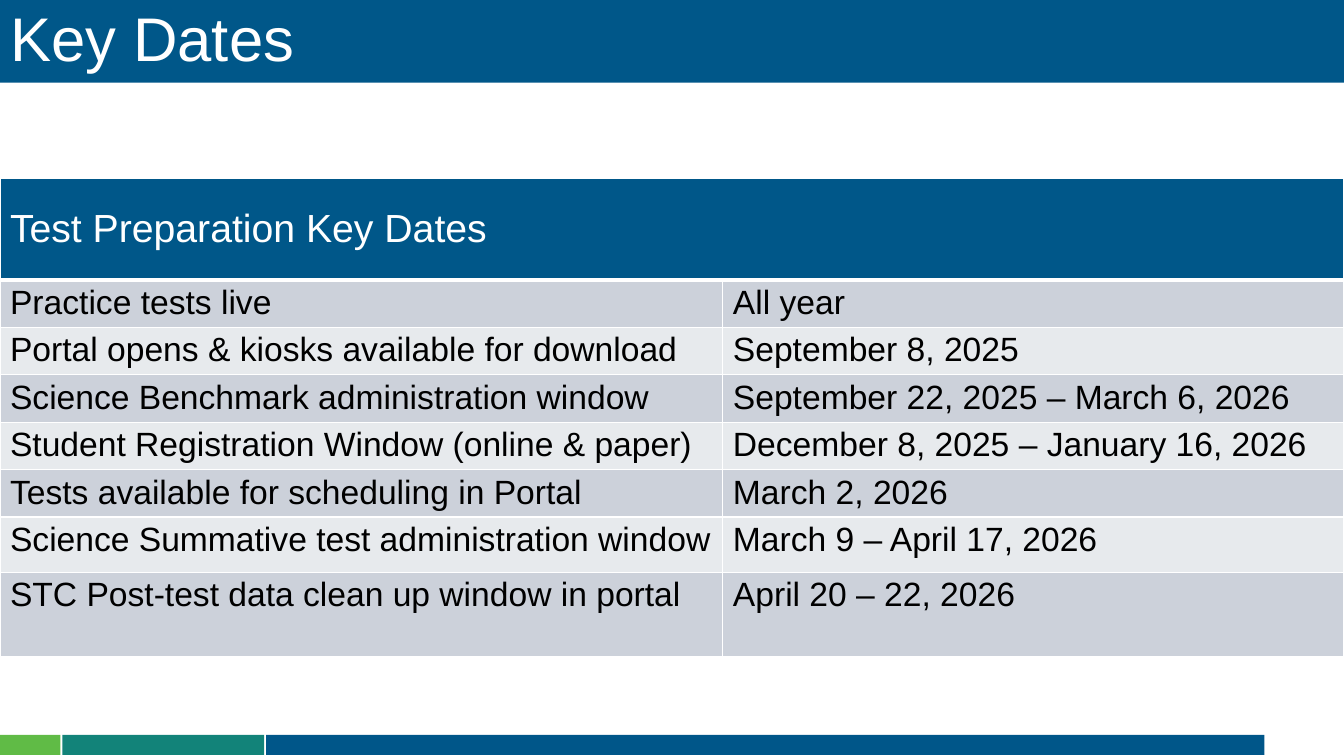
from typing import NamedTuple

import pptx
import pptx.dml.color
import pptx.enum.shapes
import pptx.enum.text
import pptx.oxml
import pptx.oxml.ns
import pptx.util

Inches = pptx.util.Inches
Pt = pptx.util.Pt
RGBColor = pptx.dml.color.RGBColor

FONT = "Arial"
WHITE = RGBColor(0xFF, 0xFF, 0xFF)
BLACK = RGBColor(0x00, 0x00, 0x00)
TITLE_BLUE = RGBColor(0x00, 0x57, 0x89)
FOOTER_BLUE = RGBColor(0x00, 0x56, 0x89)
GREEN = RGBColor(0x60, 0xBB, 0x46)
TEAL = RGBColor(0x12, 0x83, 0x79)
BANDS = (RGBColor(0xCC, 0xD1, 0xDA), RGBColor(0xE7, 0xEA, 0xED))

SLIDE_WIDTH = 13.33
COLUMN_WIDTHS = (7.17, 6.16)
HEADER_HEIGHT = 1.01


class FooterBar(NamedTuple):
    left: float
    width: float
    color: RGBColor


class KeyDate(NamedTuple):
    event: str
    when: str
    height: float = 0.47


FOOTER_BARS = (
    FooterBar(0, 0.6, GREEN),
    FooterBar(0.62, 2, TEAL),
    FooterBar(2.64, 9.9, FOOTER_BLUE),
)

KEY_DATES = (
    KeyDate("Practice tests live", "All year"),
    KeyDate("Portal opens & kiosks available for download", "September 8, 2025"),
    KeyDate("Science Benchmark administration window", "September 22, 2025 – March 6, 2026"),
    KeyDate("Student Registration Window (online & paper)", "December 8, 2025 – January 16, 2026"),
    KeyDate("Tests available for scheduling in Portal", "March 2, 2026"),
    KeyDate("Science Summative test administration window", "March 9 – April 17, 2026", 0.55),
    KeyDate("STC Post-test data clean up window in portal", "April 20 – 22, 2026", 0.84),
)


def write_text(frame, text: str, size: float, color: RGBColor) -> None:
    para = frame.paragraphs[0]
    para.alignment = pptx.enum.text.PP_ALIGN.LEFT
    span = para.add_run()
    span.text = text
    span.font.name = FONT
    span.font.size = Pt(size)
    span.font.bold = False
    span.font.color.rgb = color


def add_footer_bar(page, bar: FooterBar) -> None:
    shape = page.shapes.add_shape(
        pptx.enum.shapes.MSO_SHAPE.RECTANGLE,
        Inches(bar.left), Inches(7.29), Inches(bar.width), Inches(0.2),
    )
    shape.shadow.inherit = False
    shape.fill.solid()
    shape.fill.fore_color.rgb = bar.color
    shape.line.fill.background()


def fill_title(title) -> None:
    title.left, title.top = Inches(0), Inches(0)
    title.width, title.height = Inches(SLIDE_WIDTH), Inches(0.82)
    title.fill.solid()
    title.fill.fore_color.rgb = TITLE_BLUE
    frame = title.text_frame
    frame.auto_size = pptx.enum.text.MSO_AUTO_SIZE.NONE
    frame.vertical_anchor = pptx.enum.text.MSO_ANCHOR.MIDDLE
    write_text(frame, "Key Dates", 44, WHITE)
    frame.paragraphs[0].line_spacing = 0.9


def style_cell(cell, fill: RGBColor, top: float = 1, bottom: float = 1) -> None:
    """Give a cell white borders, with top and bottom widths in points, and a fill."""
    properties = cell._tc.get_or_add_tcPr()
    for side, width in (("L", 1), ("R", 1), ("T", top), ("B", bottom)):
        properties.append(pptx.oxml.parse_xml(
            f'<a:ln{side} {pptx.oxml.ns.nsdecls("a")} w="{Pt(width)}">'
            f'<a:solidFill><a:srgbClr val="{WHITE}"/></a:solidFill></a:ln{side}>'
        ))
    cell.fill.solid()
    cell.fill.fore_color.rgb = fill
    cell.margin_top = cell.margin_bottom = Inches(0.04)


def add_dates_table(page) -> None:
    heights = [HEADER_HEIGHT, *(entry.height for entry in KEY_DATES)]
    table = page.shapes.add_table(
        len(heights), len(COLUMN_WIDTHS),
        Inches(0), Inches(1.77), Inches(SLIDE_WIDTH), Inches(sum(heights)),
    ).table
    for column, width in zip(table.columns, COLUMN_WIDTHS):
        column.width = Inches(width)
    for row, height in zip(table.rows, heights):
        row.height = Inches(height)

    header = table.cell(0, 0)
    header.merge(table.cell(0, 1))
    for cell in table.rows[0].cells:
        style_cell(cell, TITLE_BLUE, bottom=3)
    header.vertical_anchor = pptx.enum.text.MSO_ANCHOR.MIDDLE
    write_text(header.text_frame, "Test Preparation Key Dates", 28, WHITE)

    for index, entry in enumerate(KEY_DATES):
        for column, text in enumerate((entry.event, entry.when)):
            cell = table.cell(index + 1, column)
            style_cell(cell, BANDS[index % 2], top=3 if index == 0 else 1)
            write_text(cell.text_frame, text, 24, BLACK)


def main() -> None:
    deck = pptx.Presentation()
    deck.slide_width, deck.slide_height = Inches(SLIDE_WIDTH), Inches(7.5)
    page = deck.slides.add_slide(deck.slide_layouts.get_by_name("Title Only"))
    for bar in FOOTER_BARS:
        add_footer_bar(page, bar)
    fill_title(page.shapes.title)
    add_dates_table(page)
    deck.save("out.pptx")


if __name__ == "__main__":
    main()
